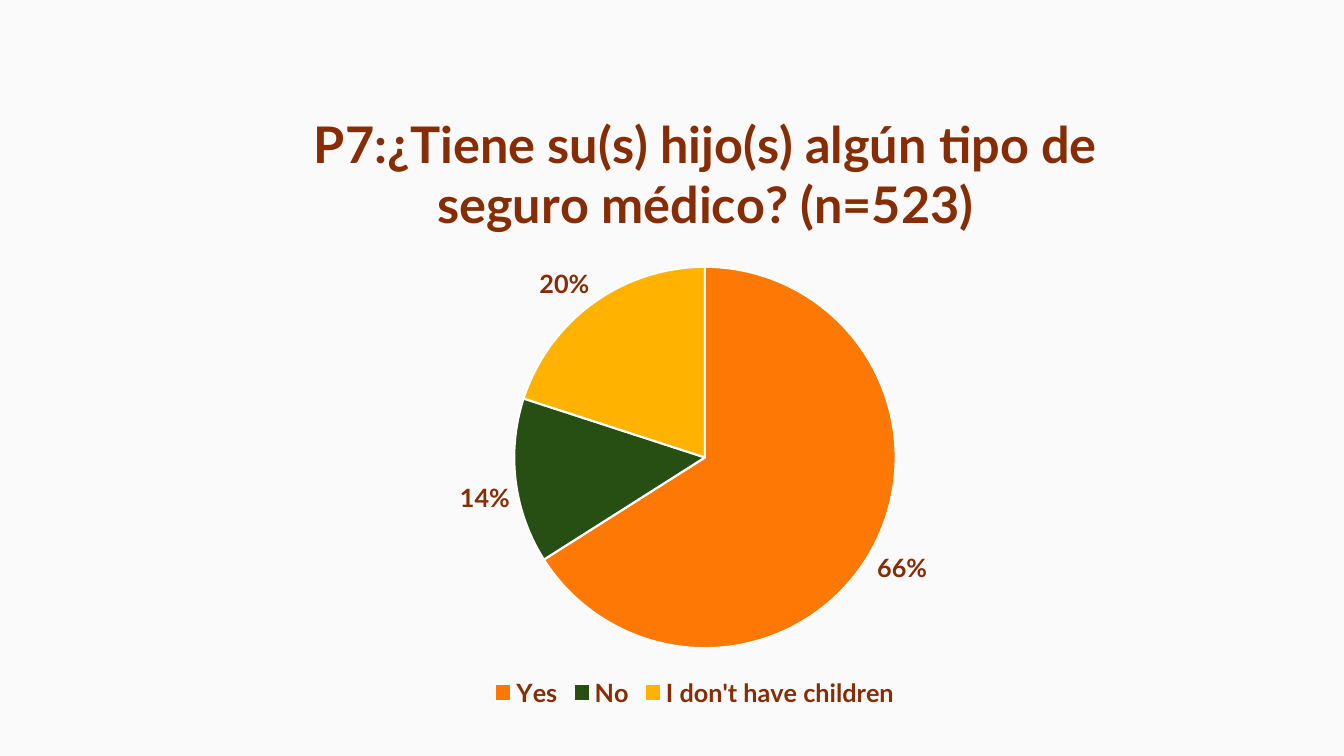
from pptx import Presentation
from pptx.chart.data import CategoryChartData
from pptx.dml.color import RGBColor
from pptx.enum.chart import XL_CHART_TYPE, XL_LABEL_POSITION, XL_LEGEND_POSITION
from pptx.oxml import parse_xml
from pptx.oxml.ns import nsdecls, qn
from pptx.util import Inches, Pt

BROWN, WHITE, PAPER = "862D05", "FFFFFF", "FAFAFA"
TITLE = "P7:¿Tiene su(s) hijo(s) algún tipo de seguro médico? (n=523)"
SHARES = [("Yes", 0.66, "FD7804"), ("No", 0.14, "274E13"),
          ("I don't have children", 0.2, "FFB200")]
BOX = (0.14, 0.088, 0.754, 0.855)


def paint(fill, code):
    """Give a fill one solid colour."""
    fill.solid()
    fill.fore_color.rgb = RGBColor.from_string(code)


def style(font, size):
    """Set the bold brown type used across the chart."""
    for key, val in {"name": "Lato", "size": Pt(size), "bold": True}.items():
        setattr(font, key, val)
    font.color.rgb = RGBColor.from_string(BROWN)


def place(part, spot, **shares):
    """Fix a chart part at shares of the chart's size."""
    old = part.find(qn("c:layout"))
    if old is not None:
        part.remove(old)
    modes = {"xMode": "edge", "yMode": "edge"}
    inner = "".join(f'<c:{key} val="{val}"/>' for key, val in {**modes, **shares}.items())
    target = '<c:layoutTarget val="inner"/>' if "w" in shares else ""
    part.insert(spot, parse_xml(
        f'<c:layout {nsdecls("c")}><c:manualLayout>{target}{inner}</c:manualLayout></c:layout>'))


def add_head(chart):
    """Write the question above the pie."""
    chart.has_title = True
    frame = chart.chart_title.text_frame
    frame.text = TITLE
    style(frame.paragraphs[0].runs[0].font, 36)
    chart.chart_title.include_in_layout = False
    place(chart.chart_title._element, 1, x=0.115, y=0.05)


def add_key(chart):
    """Set the legend below the pie."""
    chart.has_legend = True
    for key, val in {"position": XL_LEGEND_POSITION.BOTTOM,
                     "include_in_layout": False}.items():
        setattr(chart.legend, key, val)
    style(chart.legend.font, 18)


def add_pie(slide, box):
    """Draw the pie chart with its title, labels and legend."""
    data = CategoryChartData(number_format="0%")
    data.categories = [name for name, _, _ in SHARES]
    data.add_series("Series 1", [share for _, share, _ in SHARES])
    chart = slide.shapes.add_chart(XL_CHART_TYPE.PIE, *box, data).chart
    style(chart.font, 18)
    add_head(chart)
    add_key(chart)
    plot = chart.plots[0]
    plot.vary_by_categories = True
    for spot, (_, _, code) in enumerate(SHARES):
        form = plot.series[0].points[spot].format
        paint(form.fill, code)
        paint(form.line.fill, WHITE)
        form.line.width = Pt(1.5)
    labels = plot.series[0].data_labels
    for key, val in {"show_value": True, "number_format": "0%",
                     "number_format_is_linked": False,
                     "position": XL_LABEL_POSITION.OUTSIDE_END}.items():
        setattr(labels, key, val)
    style(labels.font, 18)
    area = chart._chartSpace.find(".//" + qn("c:plotArea"))
    place(area, 0, x=0.32, y=0.31, w=0.38, h=0.59)


def main():
    """Build and save the slide."""
    deck = Presentation()
    deck.slide_width, deck.slide_height = Inches(13.33), Inches(7.5)
    slide = deck.slides.add_slide(deck.slide_layouts[6])
    paint(slide.background.fill, PAPER)
    sizes = (deck.slide_width, deck.slide_height) * 2
    add_pie(slide, [int(share * size) for share, size in zip(BOX, sizes)])
    deck.save("out.pptx")


if __name__ == "__main__":
    main()
